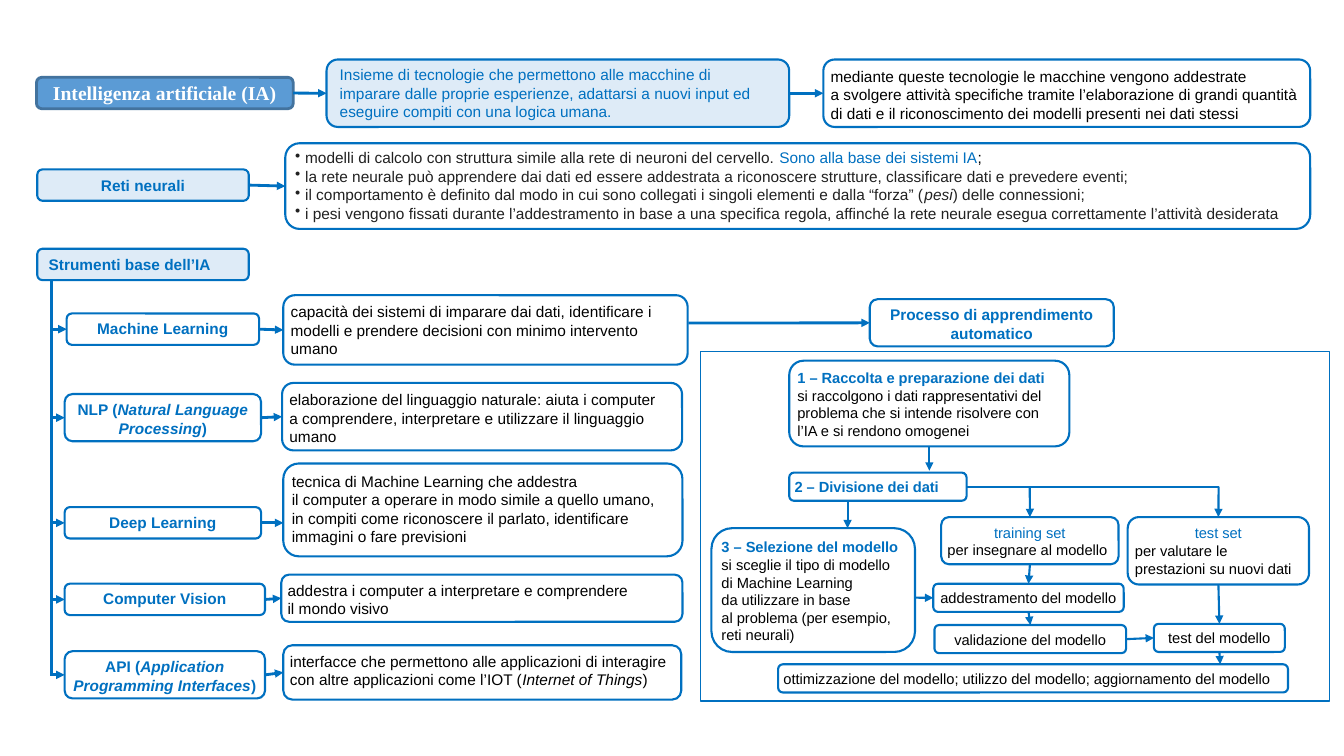
from dataclasses import dataclass
from typing import NamedTuple, Optional, Union

from lxml.etree import SubElement
from pptx import Presentation
from pptx.dml.color import RGBColor
from pptx.enum.shapes import MSO_CONNECTOR as Connector, MSO_SHAPE as Preset
from pptx.enum.text import MSO_ANCHOR as Anchor, PP_ALIGN as Align
from pptx.oxml.ns import qn
from pptx.util import Cm, Pt


@dataclass(frozen=True)
class Theme:
    blue: str = "0070C0"
    pale: str = "DEEBF7"
    title_fill: str = "5B9BD5"
    title_line: str = "43739E"
    white: str = "FFFFFF"
    black: str = "000000"
    dark: str = "212121"
    font: str = "Arial"
    title_font: str = "Times New Roman"
    title_size: float = 14
    text_size: float = 11
    small_size: float = 10.5


theme = Theme()
TOP, LEFT, BOTTOM, RIGHT = range(4)


class Run(NamedTuple):
    text: str
    color: Optional[str] = None
    italic: bool = False


class Text(NamedTuple):
    runs: tuple
    color: str = theme.black
    bold: bool = False
    align: Align = Align.LEFT
    size: float = theme.text_size
    font: str = theme.font


@dataclass(frozen=True)
class Box:
    left: float
    top: float
    width: float
    height: float
    texts: tuple = ()
    fill: Optional[str] = None
    line: str = theme.blue
    weight: float = 1.5
    inset: tuple = (0.1, 0.1)
    anchor: Anchor = Anchor.TOP
    preset: Preset = Preset.ROUNDED_RECTANGLE

    @property
    def middle(self) -> float:
        return self.top + self.height / 2


class Joint(NamedTuple):
    box: str
    side: int


class Point(NamedTuple):
    x: float
    y: float


class Link(NamedTuple):
    start: Union[Joint, Point]
    end: Union[Joint, Point]
    weight: float = 1.5
    arrow: bool = True


def body(*runs, size: float = theme.text_size, align: Align = Align.LEFT, color: str = theme.black) -> Text:
    return Text(tuple(Run(run) if isinstance(run, str) else run for run in runs), color, False, align, size)


def small(text: str, align: Align = Align.LEFT, color: str = theme.black) -> Text:
    return body(text, size=theme.small_size, align=align, color=color)


def heading(*runs, size: float = theme.text_size, align: Align = Align.CENTER) -> Text:
    return body(*runs, size=size, align=align, color=theme.blue)._replace(bold=True)


def step(text: str) -> Text:
    return heading(text, size=theme.small_size, align=Align.LEFT)


def italic(text: str) -> Run:
    return Run(text, italic=True)


def write(frame, texts: tuple, bulleted: bool = False) -> None:
    frame.word_wrap = True
    for index, text in enumerate(texts):
        paragraph = frame.paragraphs[0] if index == 0 else frame.add_paragraph()
        paragraph.alignment = text.align
        if bulleted:
            properties = paragraph._p.get_or_add_pPr()
            properties.set("marL", str(Cm(0.25)))
            properties.set("indent", str(-Cm(0.25)))
            SubElement(properties, qn("a:buChar")).set("char", "•")
        font = paragraph.font
        font.name, font.size, font.bold = text.font, Pt(text.size), text.bold
        font.color.rgb = RGBColor.from_string(text.color)
        for part in text.runs:
            for number, piece in enumerate(part.text.split("\n")):
                if number:
                    paragraph.add_line_break()
                run = paragraph.add_run()
                run.text = piece
                if part.italic:
                    run.font.italic = True
                if part.color:
                    run.font.color.rgb = RGBColor.from_string(part.color)


def draw_box(slide, box: Box):
    shape = slide.shapes.add_shape(box.preset, Cm(box.left), Cm(box.top), Cm(box.width), Cm(box.height))
    shape.shadow.inherit = False
    if box.fill:
        shape.fill.solid()
        shape.fill.fore_color.rgb = RGBColor.from_string(box.fill)
    else:
        shape.fill.background()
    shape.line.color.rgb = RGBColor.from_string(box.line)
    shape.line.width = Pt(box.weight)
    frame = shape.text_frame
    frame.margin_left = frame.margin_right = Cm(box.inset[0])
    frame.margin_top = frame.margin_bottom = Cm(box.inset[1])
    frame.vertical_anchor = box.anchor
    write(frame, box.texts)
    return shape


def draw_link(slide, link: Link, shapes: dict) -> None:
    ends = [end if isinstance(end, Point) else Point(0, 0) for end in (link.start, link.end)]
    connector = slide.shapes.add_connector(Connector.STRAIGHT, *(Cm(value) for end in ends for value in end))
    for end, join in ((link.start, connector.begin_connect), (link.end, connector.end_connect)):
        if isinstance(end, Joint):
            join(shapes[end.box], end.side)
    connector.line.color.rgb = RGBColor.from_string(theme.blue)
    connector.line.width = Pt(link.weight)
    if link.arrow:
        SubElement(connector.line._get_or_add_ln(), qn("a:tailEnd")).set("type", "triangle")
    SubElement(connector._element.spPr, qn("a:effectLst"))


label = dict(fill=theme.pale, inset=(0.25, 0.13), anchor=Anchor.MIDDLE)
CENTER = Align.CENTER
boxes = {
    # Definition row
    "ia": Box(0.92, 1.95, 6.47, 0.79, (Text((Run("Intelligenza artificiale (IA)"),), theme.white, True, CENTER, theme.title_size, theme.title_font),),
              fill=theme.title_fill, line=theme.title_line, weight=2, anchor=Anchor.MIDDLE),
    "definizione": Box(8.23, 1.5, 11.66, 1.7, (body("Insieme di tecnologie che permettono alle macchine di imparare dalle proprie esperienze, adattarsi a nuovi input ed eseguire compiti con una logica umana.", color=theme.blue),), **label),
    "addestrate": Box(20.75, 1.5, 12.27, 1.7, (
        body("mediante queste tecnologie le macchine vengono addestrate"),
        body("a svolgere attività specifiche tramite l’elaborazione di grandi quantità"),
        body("di dati e il riconoscimento dei modelli presenti nei dati stessi"))),
    # Neural networks and tools labels
    "reti": Box(0.94, 4.27, 5.33, 0.79, (heading("Reti neurali"),), **label),
    "reti_testo": Box(7.19, 3.61, 25.83, 2.16),
    "strumenti": Box(0.94, 6.27, 5.33, 0.79, (heading("Strumenti base dell’IA", align=Align.LEFT),), **label),
    # Learning process
    "processo": Box(21.92, 7.54, 6.15, 1.19, (heading("Processo di apprendimento automatico"),)),
    "cornice": Box(17.65, 8.86, 15.85, 8.81, weight=1, preset=Preset.RECTANGLE),
    "raccolta": Box(19.89, 9.09, 7.06, 2.16, (
        step("1 – Raccolta e preparazione dei dati"),
        small("si raccolgono i dati rappresentativi del problema che si intende risolvere con l’IA e si rendono omogenei"))),
    "divisione": Box(19.89, 11.91, 4.47, 0.71, (step("2 – Divisione dei dati"),)),
    "selezione": Box(17.93, 13.31, 5.13, 3.12, (
        step("3 – Selezione del modello"), small("si sceglie il tipo di modello di Machine Learning"),
        small("da utilizzare in base"), small("al problema (per esempio, reti neurali)"))),
    "training": Box(23.72, 13.03, 4.47, 1.19, (small("training set", CENTER, theme.blue), small("per insegnare al modello"))),
    "test_set": Box(28.42, 13.03, 4.57, 1.7, (
        small("test set", CENTER, theme.blue), small("per valutare le prestazioni su nuovi dati"))),
    "addestramento": Box(23.52, 14.71, 4.8, 0.71, (small("addestramento del modello", CENTER),)),
    "validazione": Box(23.55, 15.75, 4.83, 0.71, (small("validazione del modello", CENTER),)),
    "test": Box(29.08, 15.72, 3.3, 0.71, (small("test del modello", CENTER),)),
    "ottimizzazione": Box(19.61, 16.74, 12.85, 0.71, (
        small("ottimizzazione del modello; utilizzo del modello; aggiornamento del modello"),)),
}

# Each tool beside its description
tools = [
    (Box(1.68, 7.9, 4.85, 0.79, (heading("Machine Learning"),)),
     Box(7.14, 7.44, 10.19, 1.75, (body("capacità dei sistemi di imparare dai dati, identificare i modelli e prendere decisioni con minimo intervento umano"),))),
    (Box(1.63, 9.93, 4.95, 1.19, (heading("NLP (", italic("Natural Language Processing"), ")"),)),
     Box(7.11, 9.65, 10.08, 1.7, (
         body("elaborazione del linguaggio naturale: aiuta i computer"),
         body("a comprendere, interpretare e utilizzare il linguaggio umano")))),
    (Box(1.63, 12.78, 4.95, 0.79, (heading("Deep Learning"),)),
     Box(7.14, 11.68, 10.06, 2.34, (
         body("tecnica di Machine Learning che addestra"),
         body("il computer a operare in modo simile a quello umano, \nin compiti come riconoscere il parlato, identificare immagini o fare previsioni")))),
    (Box(1.63, 14.71, 5.05, 0.79, (heading("Computer Vision"),)),
     Box(7.09, 14.48, 10.11, 1.19, (body("addestra i computer a interpretare e comprendere \nil mondo visivo"),))),
    (Box(1.63, 16.41, 5.05, 1.19, (heading("API (", italic("Application Programming Interfaces"), ")"),)),
     Box(7.14, 16.26, 10.03, 1.37, (body("interfacce che permettono alle applicazioni di interagire con altre applicazioni come l’IOT (", italic("Internet of Things"), ")"),))),
]

neural_points = (
    body("modelli di calcolo con struttura simile alla rete di neuroni del cervello. ",
         Run("Sono alla base dei sistemi IA", theme.blue), Run(";", theme.black), color=theme.dark),
    body("la rete neurale può apprendere dai dati ed essere addestrata a riconoscere strutture, classificare dati e prevedere eventi;", color=theme.dark),
    body("il comportamento è definito dal modo in cui sono collegati i singoli elementi e dalla “forza” (", italic("pesi"), ") delle connessioni;", color=theme.dark),
    body("i pesi vengono fissati durante l’addestramento in base a una specifica regola, affinché la rete neurale esegua correttamente l’attività desiderata", color=theme.dark),
)

TRUNK_X, SPLIT_Y = 1.3, boxes["divisione"].middle
links = [
    Link(Joint("ia", RIGHT), Joint("definizione", LEFT), 2),
    Link(Joint("definizione", RIGHT), Joint("addestrate", LEFT), 2),
    Link(Joint("reti", RIGHT), Joint("reti_testo", LEFT), 2),
    Link(Point(TRUNK_X, 7.06), Point(TRUNK_X, 17.04), 2, arrow=False),
    Link(Point(17.35, 8.14), Joint("processo", LEFT), 2),
    Link(Joint("raccolta", BOTTOM), Point(23.42, 11.86)),
    Link(Joint("divisione", RIGHT), Point(30.71, SPLIT_Y), arrow=False),
    Link(Point(21.36, 12.62), Point(21.36, 13.31)),
    Link(Point(25.95, SPLIT_Y), Joint("training", TOP)),
    Link(Point(30.71, SPLIT_Y), Joint("test_set", TOP)),
    Link(Joint("training", BOTTOM), Joint("addestramento", TOP)),
    Link(Point(23.06, 15.06), Joint("addestramento", LEFT)),
    Link(Joint("addestramento", BOTTOM), Joint("validazione", TOP)),
    Link(Joint("test_set", BOTTOM), Joint("test", TOP)),
    Link(Joint("validazione", RIGHT), Joint("test", LEFT)),
    Link(Joint("test", BOTTOM), Point(30.75, 16.74)),
]
for row, (tool, description) in enumerate(tools):
    boxes |= {f"tool_{row}": tool, f"description_{row}": description}
    level = abs(tool.middle - description.middle) < 0.1
    target = Joint(f"description_{row}", LEFT) if level else Point(description.left, tool.middle)
    links += [Link(Point(TRUNK_X, tool.middle), Joint(f"tool_{row}", LEFT), 2),
              Link(Joint(f"tool_{row}", RIGHT), target, 2)]


def main() -> None:
    presentation = Presentation()
    presentation.slide_width, presentation.slide_height = Cm(33.87), Cm(19.05)
    slide = presentation.slides.add_slide(presentation.slide_layouts[6])
    shapes = {name: draw_box(slide, box) for name, box in boxes.items()}
    points_box = slide.shapes.add_textbox(Cm(7.19), Cm(3.61), Cm(25.96), Cm(2.13))
    write(points_box.text_frame, neural_points, bulleted=True)
    for link in links:
        draw_link(slide, link, shapes)
    presentation.save("out.pptx")


if __name__ == "__main__":
    main()
